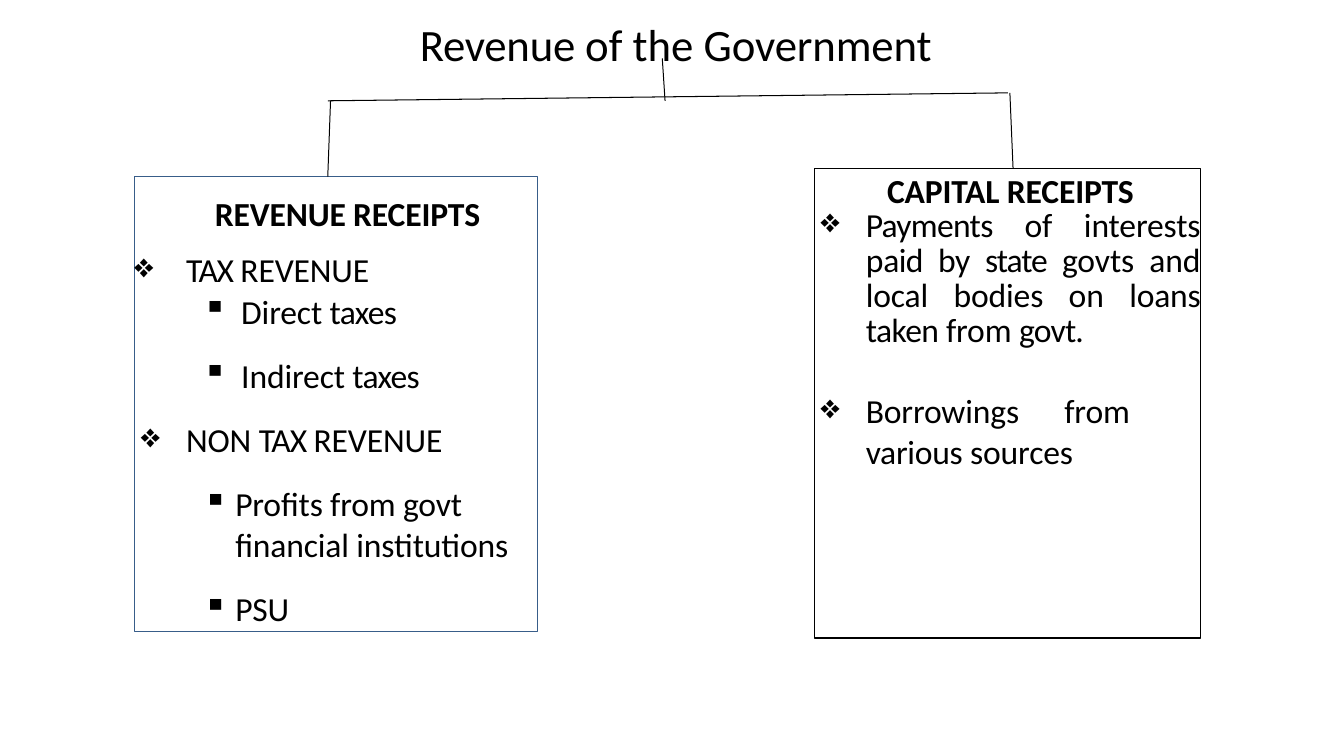
from dataclasses import dataclass

from lxml import etree
from pptx import Presentation
from pptx import util as u
from pptx.dml.color import RGBColor
from pptx.enum import shapes, text
from pptx.oxml.ns import qn

INK = {"black": "000000", "blue": "385D89", "white": "FFFFFF"}
FACE = "Calibri"
LEFT, MID, JUST = text.PP_ALIGN.LEFT, text.PP_ALIGN.CENTER, text.PP_ALIGN.JUSTIFY
Runs = tuple[tuple[str, float], ...]  # wording and letter spacing in points


@dataclass
class Para:
    runs: Runs
    mark: str = ""
    left: float = 0  # indents in cm
    hang: float = 0
    right: float = 0
    gap: float = 0  # points before
    pitch: float = 0  # exact line height in points
    align: text.PP_ALIGN = LEFT
    bold: bool = False


@dataclass
class Panel:
    x: float
    y: float
    w: float
    h: float
    inset: float
    line: str
    paras: list[Para]


@dataclass
class Rule:
    x1: float
    y1: float
    x2: float
    y2: float
    wide: float = 0.72


def tint(name: str) -> RGBColor:
    return RGBColor.from_string(INK[name])


def style(para, size: float, bold: bool = False) -> None:
    font = para.font
    font.name, font.size, font.bold = FACE, u.Pt(size), bold
    font.color.rgb = tint("black")


def add_runs(para, runs: Runs) -> None:
    for words, space in runs:
        run = para.add_run()
        run.text = words
        if space:
            run._r.get_or_add_rPr().set("spc", str(round(space * 100)))


def write(para, item: Para) -> None:
    props = para._p.get_or_add_pPr()
    props.set("marL", str(u.Cm(item.left)))
    props.set("marR", str(u.Cm(item.right)))
    props.set("indent", str(u.Cm(-item.hang)))
    if item.mark:
        etree.SubElement(props, qn("a:buChar")).set("char", item.mark)
    style(para, 24, item.bold)
    para.alignment = item.align
    para.space_before = u.Pt(item.gap)
    if item.pitch:
        para.line_spacing = u.Pt(item.pitch)
    add_runs(para, item.runs)


def reset(frame, inset: float = 0) -> None:
    frame.margin_left = frame.margin_right = frame.margin_bottom = 0
    frame.margin_top = u.Cm(inset)
    frame.word_wrap = True
    frame.auto_size = text.MSO_AUTO_SIZE.NONE
    frame.vertical_anchor = text.MSO_ANCHOR.TOP


def draw_panel(slide, item: Panel) -> None:
    box = slide.shapes.add_shape(
        shapes.MSO_SHAPE.RECTANGLE,
        u.Cm(item.x), u.Cm(item.y), u.Cm(item.w), u.Cm(item.h))
    box.shadow.inherit = False
    box.fill.background()
    box.line.color.rgb = tint(item.line)
    box.line.width = u.Pt(1)
    frame = box.text_frame
    reset(frame, item.inset)
    for i, para in enumerate(item.paras):
        write(frame.add_paragraph() if i else frame.paragraphs[0], para)


def draw_rule(slide, item: Rule) -> None:
    line = slide.shapes.add_connector(
        shapes.MSO_CONNECTOR.STRAIGHT,
        u.Cm(item.x1), u.Cm(item.y1), u.Cm(item.x2), u.Cm(item.y2))
    line.line.color.rgb = tint("black")
    line.line.width = u.Pt(item.wide)
    etree.SubElement(line._element.spPr, qn("a:effectLst"))


def topic(runs: Runs, hang: float, gap: float) -> Para:
    return Para(runs, "❖", 1.3, hang, gap=gap)


def point(runs: Runs, left: float, hang: float, gap: float = 17.1) -> Para:
    return Para(runs, "▪", left, hang, gap=gap)


PANELS = [
    Panel(3.39, 4.45, 10.16, 11.46, 0.41, "blue", [
        Para((("REVENUE RECEIPTS", -0.1),), left=0.58, align=MID, bold=True),
        topic((("TAX ", -0.9), ("REVENUE", -0.1)), 1.3, 11.3),
        point((("Direct ", -0.1), ("taxes", -0.5)), 2.69, 0.97, 0.9),
        point((("Indirect ", -0.1), ("taxes", -0.5)), 2.69, 0.97),
        topic((("NON ", -0.1), ("TAX ", -0.8), ("REVENUE", -0.1)), 1.14, 17.1),
        point((("Profits from govt financial institutions", -0.1),), 2.54, 0.81),
        point((("PSU", -0.1),), 2.54, 0.81),
    ]),
    Panel(20.52, 4.24, 9.73, 11.84, 0.03, "black", [
        Para((("CAPITAL RECEIPTS", -0.1),), left=1.3, hang=1.14, align=MID,
             bold=True),
        Para((("Payments ", -0.5), ("of interests p", -0.1), ("aid ", -0.5),
              ("by ", -0.4), ("state ", -0.8),
              ("govts and local bodies on ", -0.1), ("loans ", -0.2),
              ("taken ", -0.4), ("from ", -0.1), ("govt.", -0.6)),
             "❖", 1.3, 1.14, pitch=24.9, align=JUST),
        Para((("Borrowings from ", -0.1), ("various ", -0.2), ("sources", -0.1)),
             "❖", 1.3, 1.14, right=1.78, gap=29.4, align=JUST),
    ]),
]

RULES = [
    Rule(16.69, 1.47, 16.76, 2.54),  # stem under the title
    Rule(8.26, 2.54, 25.4, 2.34, 0.75),  # crossbar
    Rule(25.45, 2.34, 25.53, 4.24),  # to capital receipts
    Rule(8.33, 2.54, 8.26, 4.45),  # to revenue receipts
]


def main() -> None:
    deck = Presentation()
    deck.slide_width, deck.slide_height = u.Cm(33.87), u.Cm(19.05)
    slide = deck.slides.add_slide(deck.slide_layouts[5])
    slide.background.fill.solid()
    slide.background.fill.fore_color.rgb = tint("white")

    # Title
    title = slide.shapes.title
    title.left, title.top = u.Cm(10.36), u.Cm(0.43)
    title.width, title.height = u.Cm(13.34), u.Cm(1.37)
    reset(title.text_frame)
    head = title.text_frame.paragraphs[0]
    style(head, 32)
    head.alignment = MID
    add_runs(head, (("Revenue ", -0.2), ("of the ", 0), ("Government", -0.1)))

    # Boxes and the tree lines that lead to them
    for panel in PANELS:
        draw_panel(slide, panel)
    for rule in RULES:
        draw_rule(slide, rule)

    deck.save("out.pptx")


if __name__ == "__main__":
    main()
